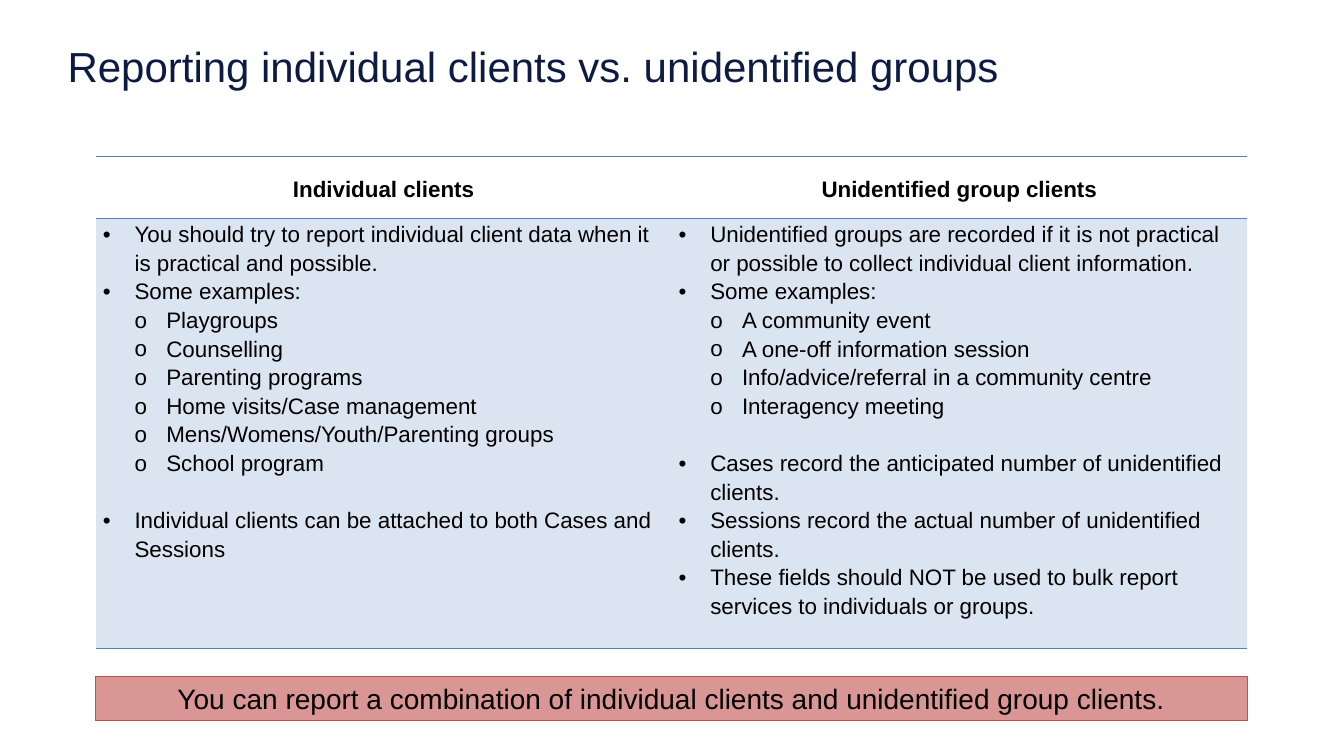
from typing import NamedTuple

from lxml import etree
from pptx import Presentation
from pptx.dml.color import RGBColor
from pptx.enum import shapes, text
from pptx.oxml import ns
from pptx.util import Inches, Pt

FONT = "Arial"
BLACK = "000000"
BLUE = "4F81BD"
LEFT, WIDTH = 0.95, 11.42
LINE_SPACING = 1.15
GROUP_GAP = 20.4
INDENT = 0.315


class Item(NamedTuple):
    words: str
    level: int = 1
    gap: float = 0


class Column(NamedTuple):
    heading: str
    items: list[Item]


COLUMNS = [
    Column("Individual clients", [
        Item("You should try to report individual client data when it is practical and possible."),
        Item("Some examples:"),
        Item("Playgroups", 2),
        Item("Counselling", 2),
        Item("Parenting programs", 2),
        Item("Home visits/Case management", 2),
        Item("Mens/Womens/Youth/Parenting groups", 2),
        Item("School program", 2),
        Item("Individual clients can be attached to both Cases and Sessions", gap=GROUP_GAP),
    ]),
    Column("Unidentified group clients", [
        Item("Unidentified groups are recorded if it is not practical or possible "
             "to collect individual client information."),
        Item("Some examples:"),
        Item("A community event", 2),
        Item("A one-off information session", 2),
        Item("Info/advice/referral in a community centre", 2),
        Item("Interagency meeting", 2),
        Item("Cases record the anticipated number of unidentified clients.", gap=GROUP_GAP),
        Item("Sessions record the actual number of unidentified clients."),
        Item("These fields should NOT be used to bulk report services to individuals or groups."),
    ]),
]


def rgb(color: str) -> RGBColor:
    return RGBColor.from_string(color)


def add_child(parent, tag: str, **attributes: str):
    return etree.SubElement(parent, ns.qn(tag), attributes)


def style_text(para, size: float, color: str = BLACK, bold: bool = False) -> None:
    for span in para.runs:
        span.font.name = FONT
        span.font.size = Pt(size)
        span.font.bold = bold
        span.font.color.rgb = rgb(color)


def set_borders(cell) -> None:
    properties = cell._tc.get_or_add_tcPr()
    for index, side in enumerate(("lnL", "lnR", "lnT", "lnB")):
        line = etree.Element(ns.qn(f"a:{side}"), w=str(Pt(1)))
        if side in ("lnT", "lnB"):
            add_child(add_child(line, "a:solidFill"), "a:srgbClr", val=BLUE)
        else:
            add_child(line, "a:noFill")
        properties.insert(index, line)


def prepare_cell(cell) -> None:
    cell.margin_left = cell.margin_right = Inches(0.07)
    cell.margin_top = cell.margin_bottom = 0
    set_borders(cell)


def fill_heading(cell, heading: str) -> None:
    cell.fill.background()
    prepare_cell(cell)
    cell.vertical_anchor = text.MSO_ANCHOR.MIDDLE
    para = cell.text_frame.paragraphs[0]
    para.text = heading
    para.alignment = text.PP_ALIGN.CENTER
    para.line_spacing = LINE_SPACING
    style_text(para, 16, bold=True)


def write_item(para, item: Item) -> None:
    para.text = item.words
    para.line_spacing = LINE_SPACING
    if item.gap:
        para.space_before = Pt(item.gap)
    properties = para._p.get_or_add_pPr()
    properties.set("marL", str(Inches(INDENT * item.level)))
    properties.set("indent", str(-Inches(INDENT)))
    add_child(properties, "a:buFont", typeface=FONT)
    add_child(properties, "a:buChar", char="•" if item.level == 1 else "o")
    style_text(para, 16)


def fill_body(cell, items: list[Item]) -> None:
    cell.fill.solid()
    cell.fill.fore_color.rgb = rgb(BLUE)
    tint = cell._tc.tcPr.find(".//" + ns.qn("a:srgbClr"))
    add_child(tint, "a:alpha", val="20000")
    prepare_cell(cell)
    frame = cell.text_frame
    frame.text = "\n".join(item.words for item in items)
    for para, item in zip(frame.paragraphs, items):
        write_item(para, item)


def add_title(page) -> None:
    box = page.shapes.add_textbox(Inches(0.67), Inches(0.4), Inches(12), Inches(0.66))
    frame = box.text_frame
    frame.word_wrap = True
    frame.margin_left = frame.margin_right = frame.margin_top = frame.margin_bottom = 0
    frame.text = "Reporting individual clients vs. unidentified groups"
    style_text(frame.paragraphs[0], 30, "0D1B43")


def add_comparison(page) -> None:
    table = page.shapes.add_table(
        2, len(COLUMNS), Inches(LEFT), Inches(1.55), Inches(WIDTH), Inches(4.36)).table
    table.first_row = table.horz_banding = False
    table.rows[0].height = Inches(0.62)
    table.rows[1].height = Inches(3.74)
    for index, column in enumerate(COLUMNS):
        table.columns[index].width = Inches(WIDTH / len(COLUMNS))
        fill_heading(table.cell(0, index), column.heading)
        fill_body(table.cell(1, index), column.items)


def add_banner(page) -> None:
    banner = page.shapes.add_shape(
        shapes.MSO_SHAPE.RECTANGLE, Inches(LEFT), Inches(6.71), Inches(WIDTH), Inches(0.44))
    banner.shadow.inherit = False
    banner.fill.solid()
    banner.fill.fore_color.rgb = rgb("D99694")
    banner.line.color.rgb = rgb("C0504D")
    banner.line.width = Pt(0.75)
    frame = banner.text_frame
    frame.word_wrap = True
    frame.auto_size = text.MSO_AUTO_SIZE.SHAPE_TO_FIT_TEXT
    frame.text = "You can report a combination of individual clients and unidentified group clients."
    frame.paragraphs[0].alignment = text.PP_ALIGN.CENTER
    style_text(frame.paragraphs[0], 20)


def main() -> None:
    deck = Presentation()
    deck.slide_width, deck.slide_height = Inches(13.33), Inches(7.5)
    page = deck.slides.add_slide(deck.slide_layouts[6])
    add_title(page)
    add_comparison(page)
    add_banner(page)
    deck.save("out.pptx")


if __name__ == "__main__":
    main()
